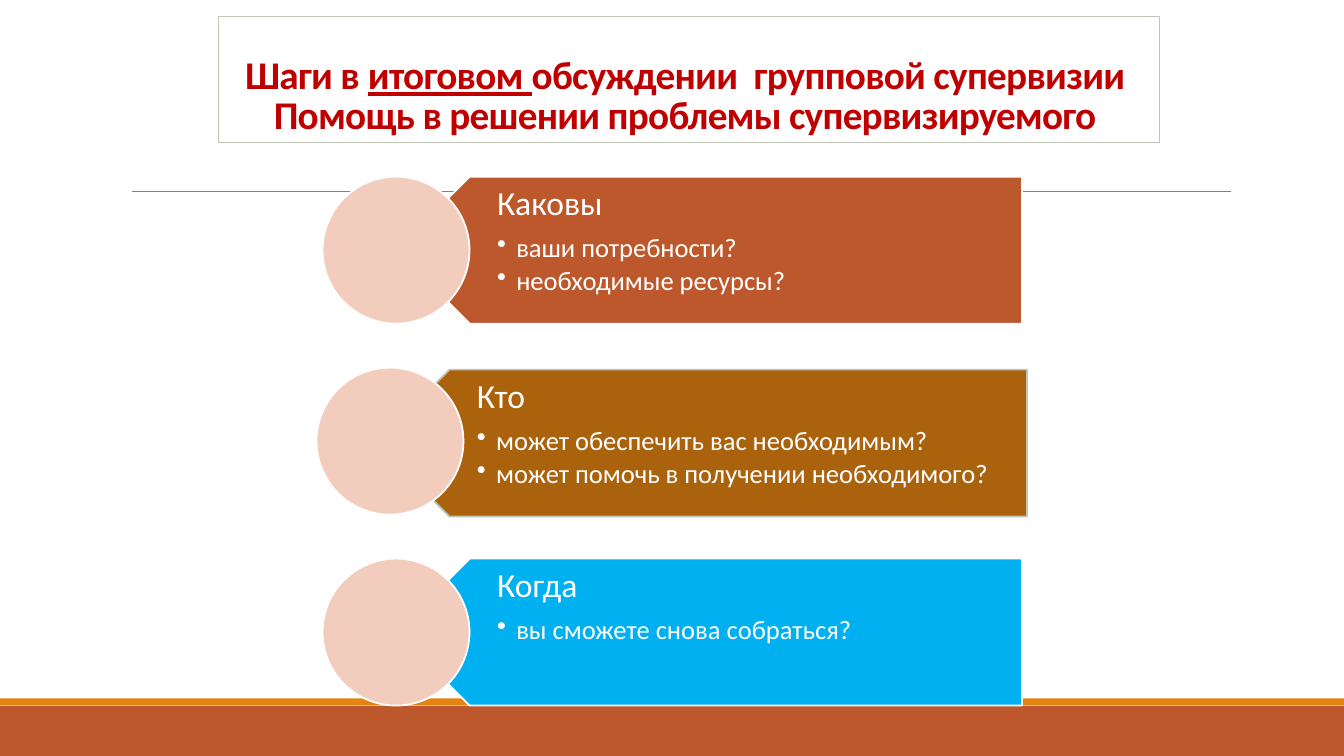
from lxml.etree import SubElement
from pptx import Presentation
from pptx.dml.color import RGBColor
from pptx.enum.shapes import MSO_CONNECTOR as CONN, MSO_SHAPE as SHAPE
from pptx.enum.text import MSO_ANCHOR as ANCHOR, MSO_AUTO_SIZE as AUTO, PP_ALIGN as ALIGN
from pptx.oxml.ns import qn
from pptx.util import Pt

COLORS = {
    "white": "FFFFFF", "rust": "BD582C", "orange": "E48312", "brown": "AB620D",
    "blue": "00B0F0", "peach": "F2CDBD", "sage": "BFC6B8", "gray": "808080", "red": "C00000",
}
FONT = "Calibri"


def rgb(name):
    return RGBColor.from_string(COLORS[name])


def add_block(kind, left, top, width, height, fill, line=None):
    sp = s.shapes.add_shape(kind, Pt(left), Pt(top), Pt(width), Pt(height))
    sp.shadow.inherit = False
    sp.fill.solid()
    sp.fill.fore_color.rgb = rgb(fill)
    if line:
        sp.line.color.rgb = rgb(line)
        sp.line.width = Pt(1.25)
    else:
        sp.line.fill.background()
    return sp


prs = Presentation()
prs.slide_width, prs.slide_height = Pt(960), Pt(540)
s = prs.slides.add_slide(prs.slide_layouts[5])

# Footer bands and rule
add_block(SHAPE.RECTANGLE, 0, 504, 960, 36, "rust")
add_block(SHAPE.RECTANGLE, 0, 498.8, 960, 4.8, "orange")
rule = s.shapes.add_connector(CONN.STRAIGHT, Pt(94.3), Pt(136.8), Pt(879), Pt(136.8))
rule.line.color.rgb = rgb("gray")
rule.line.width = Pt(0.5)
SubElement(rule._element.spPr, qn("a:effectLst"))

# Title
title = s.shapes.title
title.left, title.top, title.width, title.height = Pt(156.2), Pt(12), Pt(672), Pt(90)
title.line.color.rgb = rgb("sage")
title.line.width = Pt(0.75)
tf = title.text_frame
tf.auto_size = AUTO.NONE
tf.word_wrap = True
tf.vertical_anchor = ANCHOR.BOTTOM
p = tf.paragraphs[0]
p.alignment = ALIGN.CENTER
p.line_spacing = 0.85
TITLE_PARTS = ["Шаги в ", "итоговом ", "обсуждении  групповой супервизии ", "\v",
               "Помощь в решении проблемы супервизируемого "]
for part in TITLE_PARTS:
    if part == "\v":
        p.add_line_break()
        continue
    r = p.add_run()
    r.text = part
    r.font.name, r.font.size, r.font.bold = FONT, Pt(28), True
    r.font.underline = part == "итоговом "
    r.font.color.rgb = rgb("red")
    r._r.get_or_add_rPr().set("spc", "-50")

# Steps: heading, questions, fill, outline, arrow left, arrow width, circle left, arrow drop
STEPS = [
    ("Каковы", ["ваши потребности?", "необходимые ресурсы?"],
     "rust", "white", 283, 447, 230.4, 0),
    ("Кто", ["может обеспечить вас необходимым?", "может помочь в получении необходимого?"],
     "brown", "sage", 268.6, 465, 226.1, 1.4),
    ("Когда", ["вы сможете снова собраться?"],
     "blue", "white", 283, 447, 230.4, 0),
]
TOP, STEP, SIZE, TEXT_SHIFT = 126.2, 136.4, 105, 26
for i, (heading, questions, fill, outline, left, width, circle_left, drop) in enumerate(STEPS):
    top = TOP + i * STEP
    arrow = add_block(SHAPE.PENTAGON, left, top + drop, width, SIZE, fill, outline)
    arrow.rotation = 180

    box = s.shapes.add_textbox(Pt(left + TEXT_SHIFT), Pt(top + drop),
                               Pt(width - TEXT_SHIFT), Pt(SIZE))
    tf = box.text_frame
    tf.word_wrap = True
    tf.margin_left, tf.margin_right = Pt(46.1), Pt(13.7)
    tf.margin_top = tf.margin_bottom = Pt(7.2)
    for j, text in enumerate([heading] + questions):
        p = tf.paragraphs[0] if j == 0 else tf.add_paragraph()
        p.text = text
        p.line_spacing = 0.9
        p.space_after = Pt(2.85 if j else 8.4)
        if j:
            p.level = 1
            pPr = p._p.get_or_add_pPr()
            pPr.set("marL", str(Pt(13.7)))
            pPr.set("indent", str(-Pt(13.7)))
            SubElement(pPr, qn("a:buChar")).set("char", "•")
        font = p.runs[0].font
        font.name, font.size = FONT, Pt(19 if j else 24)
        font.color.rgb = rgb("white")

    add_block(SHAPE.OVAL, circle_left, top, SIZE, SIZE, "peach", "white")

prs.save("out.pptx")
